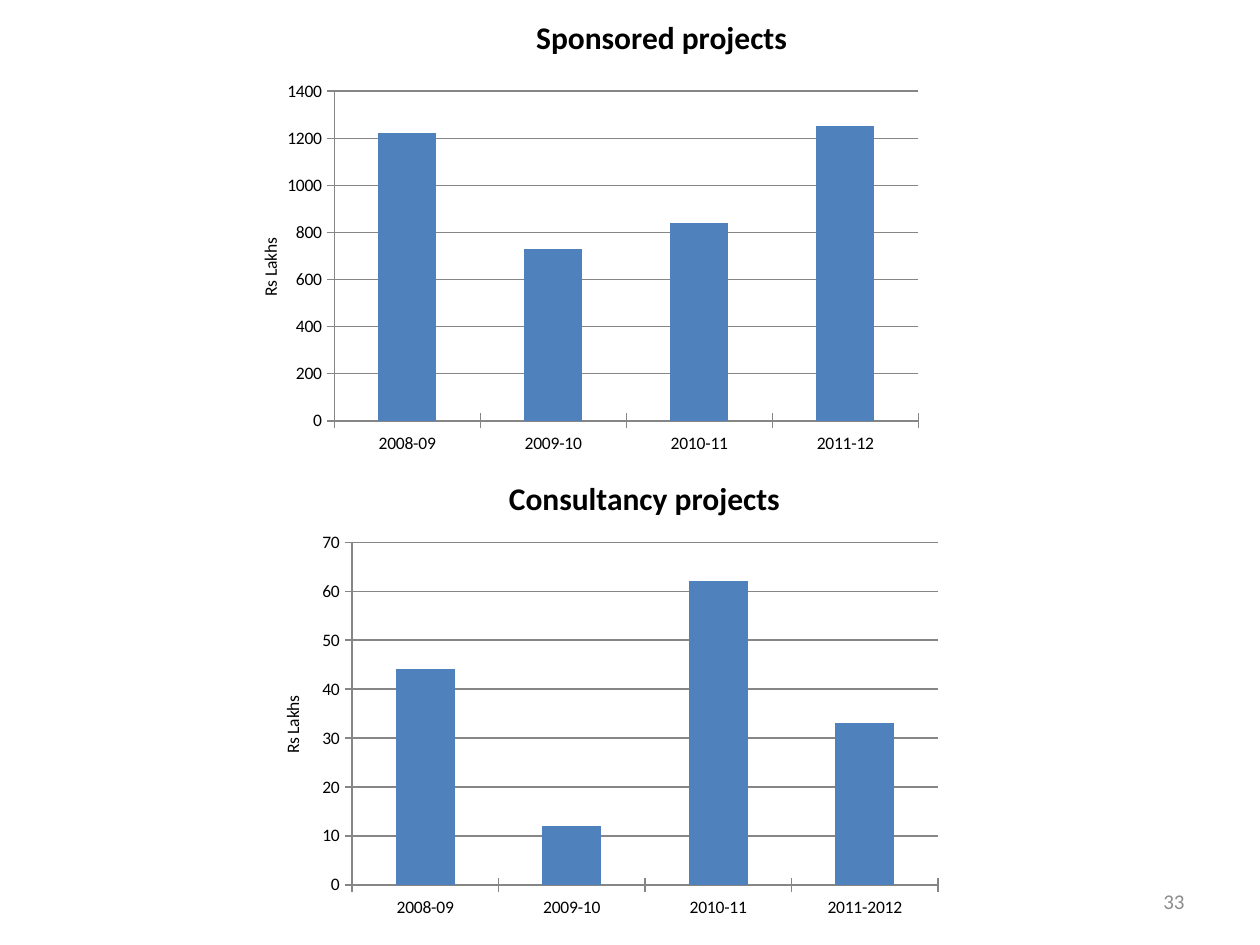
from dataclasses import dataclass

from lxml import etree
from pptx import Presentation
from pptx.chart.data import CategoryChartData
from pptx.dml.color import RGBColor
from pptx.enum.chart import XL_CHART_TYPE as ChartType, XL_TICK_MARK as TickMark
from pptx.enum.text import MSO_ANCHOR as Anchor, MSO_AUTO_SIZE as AutoSize, PP_ALIGN as Align
from pptx.oxml.ns import qn
from pptx.util import Pt

FONT = "Calibri"
BLACK, GREY, BAR_BLUE, AXIS_GREY = "000000", "8C8C8C", "4F81BD", "868686"


@dataclass
class Frame:
    left: float
    top: float
    width: float
    height: float

    def lengths(self):
        return [Pt(n) for n in (self.left, self.top, self.width, self.height)]


@dataclass
class Label:
    text: str
    frame: Frame
    size: float
    color: str
    bold: bool
    align: Align
    anchor: Anchor
    wrap: bool


@dataclass
class BarPanel:
    heading: Label
    frame: Frame
    plot: Frame  # fractions of the chart frame
    values: dict[str, float]
    top_value: float
    step: float


def color(code: str) -> RGBColor:
    return RGBColor.from_string(code)


def style_font(font, size: float, code: str, bold: bool = False) -> None:
    font.name, font.size, font.bold = FONT, Pt(size), bold
    font.color.rgb = color(code)


def heading(text: str, frame: Frame) -> Label:
    return Label(text, frame, 18, BLACK, True, Align.CENTER, Anchor.TOP, False)


def draw_label(page, label: Label) -> None:
    box = page.shapes.add_textbox(*label.frame.lengths())
    body = box.text_frame
    body.word_wrap = label.wrap
    body.auto_size = AutoSize.NONE if label.wrap else AutoSize.SHAPE_TO_FIT_TEXT
    body.vertical_anchor = label.anchor
    para = body.paragraphs[0]
    para.alignment = label.align
    span = para.add_run()
    span.text = label.text
    style_font(span.font, label.size, label.color, label.bold)


def place_plot(chart, plot: Frame) -> None:
    """Fix the inner plot area by fractions of the chart frame."""
    area = chart.element.find(".//" + qn("c:plotArea"))
    for old in area.findall(qn("c:layout")):
        area.remove(old)
    layout = etree.Element(qn("c:layout"))
    manual = etree.SubElement(layout, qn("c:manualLayout"))
    settings = {"layoutTarget": "inner", "xMode": "edge", "yMode": "edge",
                "x": plot.left, "y": plot.top, "w": plot.width, "h": plot.height}
    for tag, value in settings.items():
        etree.SubElement(manual, qn(f"c:{tag}")).set("val", str(value))
    area.insert(0, layout)


def draw_chart(page, panel: BarPanel) -> None:
    data = CategoryChartData()
    data.categories = list(panel.values)
    data.add_series("Series 1", list(panel.values.values()))
    chart = page.shapes.add_chart(
        ChartType.COLUMN_CLUSTERED, *panel.frame.lengths(), data).chart
    chart.has_title = chart.has_legend = False
    style_font(chart.font, 10, BLACK)
    place_plot(chart, panel.plot)

    # Bars
    bars = chart.plots[0]
    bars.gap_width, bars.vary_by_categories = 150, False
    fill = bars.series[0].format.fill
    fill.solid()
    fill.fore_color.rgb = color(BAR_BLUE)

    # Axes and gridlines
    value_axis = chart.value_axis
    value_axis.minimum_scale, value_axis.maximum_scale = 0, panel.top_value
    value_axis.major_unit = panel.step
    value_axis.has_major_gridlines = True
    for axis in (chart.category_axis, value_axis):
        axis.major_tick_mark = TickMark.CROSS
    for part in (chart.category_axis, value_axis, value_axis.major_gridlines):
        part.format.line.color.rgb = color(AXIS_GREY)
        part.format.line.width = Pt(0.75)

    # Value axis title
    span = value_axis.axis_title.text_frame.paragraphs[0].add_run()
    span.text = "Rs Lakhs"
    style_font(span.font, 10, BLACK)


PANELS = [
    BarPanel(heading("Sponsored projects ", Frame(298.8, 6.5, 162.7, 28.8)),
             Frame(146.2, 36.7, 389.5, 236.2), Frame(0.115, 0.065, 0.857, 0.798),
             {"2008-09": 1220, "2009-10": 730, "2010-11": 840, "2011-12": 1250},
             1400, 200),
    BarPanel(heading("Consultancy projects", Frame(283, 270, 170.6, 28.8)),
             Frame(146.2, 299.5, 398.2, 229.7), Frame(0.138, 0.045, 0.841, 0.853),
             {"2008-09": 44, "2009-10": 12, "2010-11": 62, "2011-2012": 33},
             70, 10),
]
PAGE_NUMBER = Label("33", Frame(516.2, 500.4, 167.8, 28.8), 12, GREY, False,
                    Align.RIGHT, Anchor.MIDDLE, True)


def main() -> None:
    deck = Presentation()
    deck.slide_width, deck.slide_height = Pt(720), Pt(540)
    page = deck.slides.add_slide(deck.slide_layouts[6])
    for panel in PANELS:
        draw_chart(page, panel)
    for label in [PAGE_NUMBER] + [panel.heading for panel in PANELS]:
        draw_label(page, label)
    deck.save("out.pptx")


if __name__ == "__main__":
    main()
